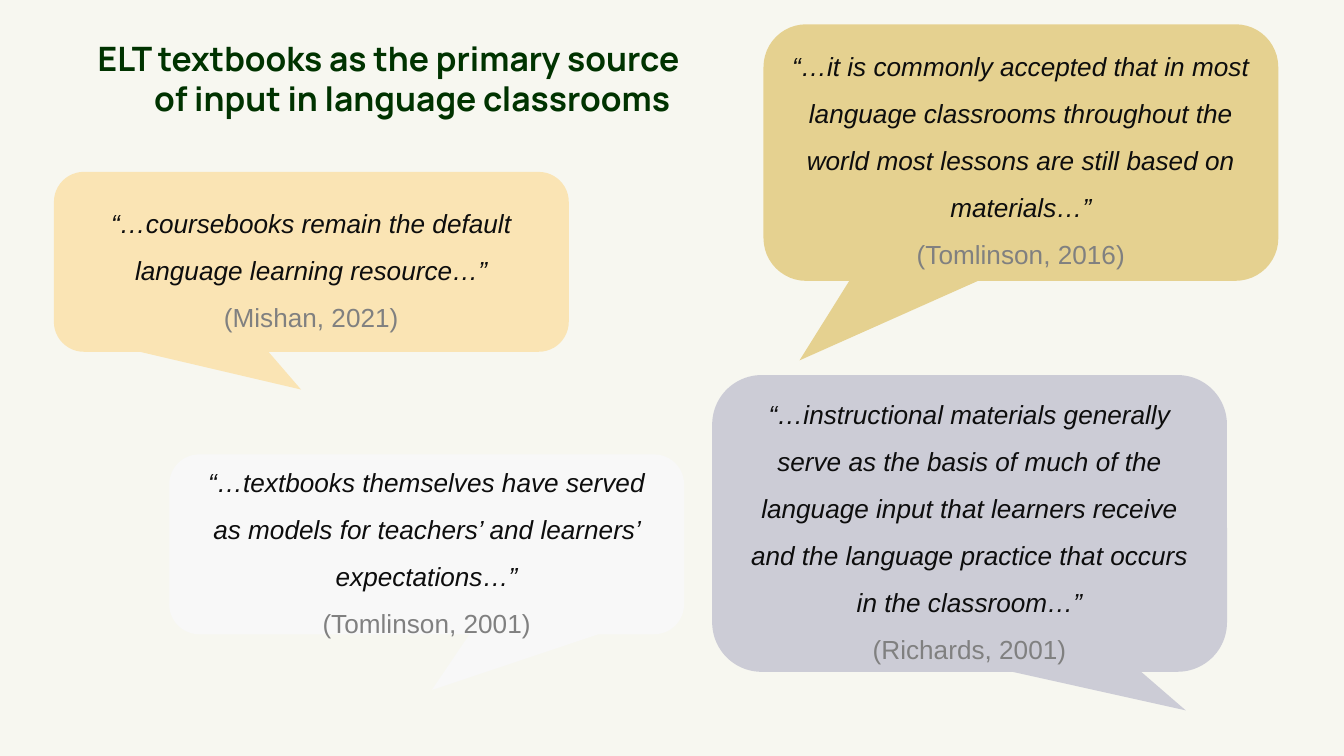
from pptx import Presentation
from pptx.dml.color import RGBColor
from pptx.enum.shapes import MSO_SHAPE
from pptx.enum.text import MSO_ANCHOR, PP_ALIGN
from pptx.oxml.ns import qn
from pptx.util import Cm, Pt
from lxml import etree

BUBBLE = MSO_SHAPE.ROUNDED_RECTANGULAR_CALLOUT
MIDDLE = MSO_ANCHOR.MIDDLE
CENTER = PP_ALIGN.CENTER

HUES = {
    "page": "F7F7F0", "title": "003300", "quote": "0D0D0D", "cite": "808080",
    "peach": "FFCC66", "gold": "CC9900", "white": "F8F8F8", "violet": "666699",
}

TITLE = "ELT textbooks as the primary source of input in language classrooms"
WIDE = 9.73  # shared bubble width in cm

# quote, citation, (left, top, height) in cm, tail tip (x, y), hue, opacity %
QUOTES = [
    ("“…coursebooks remain the default language learning resource…”",
     "(Mishan, 2021)", (1.02, 3.25, 3.4), (-0.02, 0.71), "peach", 43),
    ("“…it is commonly accepted that in most language classrooms throughout "
     "the world most lessons are still based on materials…”",
     "(Tomlinson, 2016)", (14.43, 0.46, 4.85), (-0.43, 0.81), "gold", 40),
    ("“…textbooks themselves have served as models for teachers’ and "
     "learners’ expectations…”",
     "(Tomlinson, 2001)", (3.2, 8.59, 3.4), (0.01, 0.81), "white", 100),
    ("“…instructional materials generally serve as the basis of much of the "
     "language input that learners receive and the language practice that "
     "occurs in the classroom…”",
     "(Richards, 2001)", (13.46, 7.09, 5.61), (0.42, 0.63), "violet", 29),
]


def paint(fill, hue, alpha=100):
    fill.solid()
    fill.fore_color.rgb = RGBColor.from_string(HUES[hue])
    if alpha < 100:
        node = fill._xPr.find(".//" + qn("a:srgbClr"))
        etree.SubElement(node, qn("a:alpha"), val=str(alpha * 1000))


def style(para, face, size, hue, bold=False, slant=False):
    para.alignment = CENTER
    for run in para.runs:
        font = run.font
        font.name, font.size = face, Pt(size)
        font.bold, font.italic = bold, slant
        font.color.rgb = RGBColor.from_string(HUES[hue])


def add_quote(slide, quote, cite, place, tip, hue, alpha):
    left, top, high = place
    shape = slide.shapes.add_shape(BUBBLE, Cm(left), Cm(top), Cm(WIDE), Cm(high))
    shape.shadow.inherit = False
    shape.adjustments[0], shape.adjustments[1] = tip
    paint(shape.fill, hue, alpha)
    shape.line.fill.background()
    frame = shape.text_frame
    frame.word_wrap = True
    frame.vertical_anchor = MIDDLE
    frame.text = quote + "\n" + cite
    first, last = frame.paragraphs
    style(first, "Arial", 14, "quote", slant=True)
    style(last, "Arial", 14, "cite")
    first.line_spacing = last.line_spacing = 1.5


# Page
deck = Presentation()
deck.slide_width, deck.slide_height = Cm(25.4), Cm(14.29)
slide = deck.slides.add_slide(deck.slide_layouts[6])
paint(slide.background.fill, "page")

# Title with a hanging indent
box = slide.shapes.add_textbox(Cm(1.02), Cm(0.46), Cm(12.27), Cm(2.46))
frame = box.text_frame
frame.word_wrap = True
frame.margin_left = frame.margin_right = Cm(0.25)
frame.margin_top = frame.margin_bottom = Cm(0.25)
frame.text = TITLE
head = frame.paragraphs[0]
style(head, "Manrope", 18, "title", bold=True)
props = head._p.get_or_add_pPr()
props.set("marL", str(Cm(1.27)))
props.set("indent", str(Cm(-0.89)))

# Speech bubbles
for item in QUOTES:
    add_quote(slide, *item)

deck.save("out.pptx")
